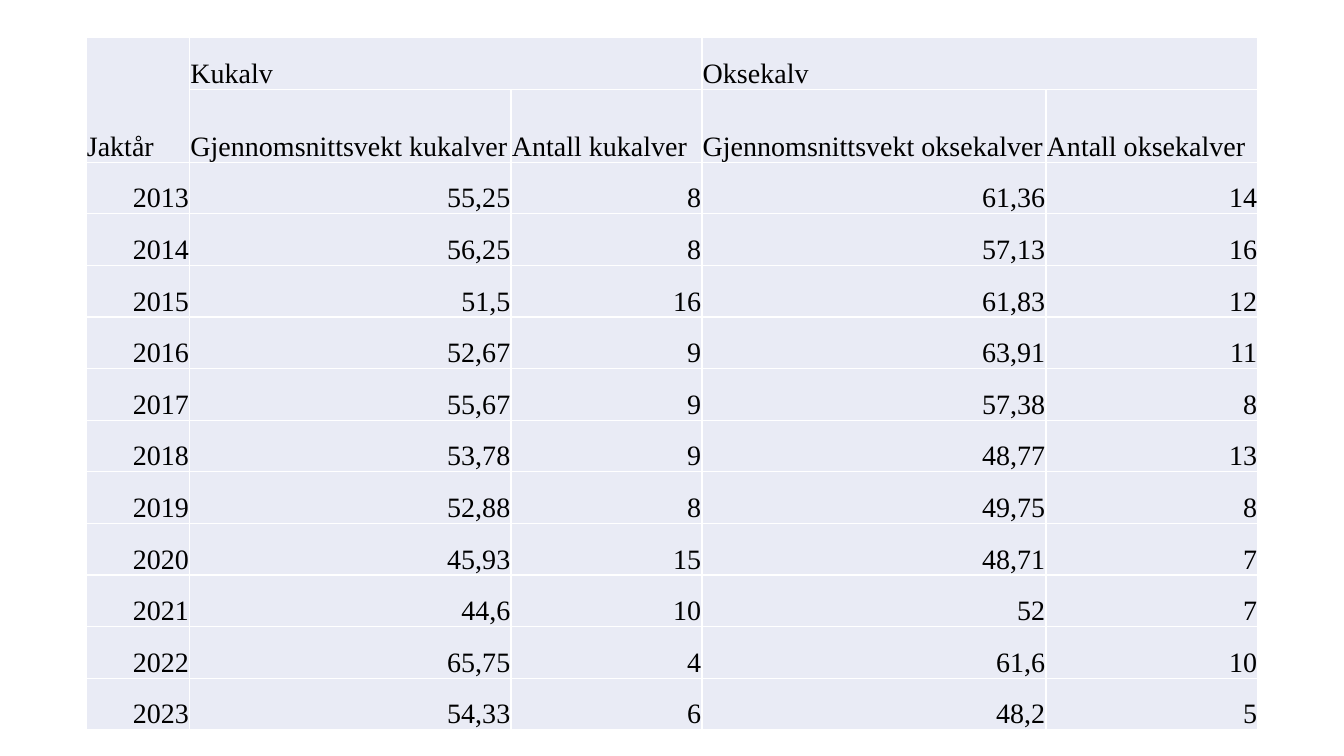
from dataclasses import dataclass

from lxml import etree
from pptx import Presentation
from pptx import util as u
from pptx.dml import color
from pptx.enum import text
from pptx.oxml import ns

COLORS = {"cell": "E9EBF5", "border": "FFFFFF", "text": "000000"}
COLUMN_WIDTHS = (2.61, 8.1, 4.81, 8.67, 5.34)
ROW_HEIGHT = 1.3
SUBHEADER_HEIGHT = 1.84


@dataclass(frozen=True)
class Header:
    row: int
    column: int
    label: str
    rows: int = 1
    columns: int = 1


@dataclass(frozen=True)
class HuntingYear:
    year: str
    cow_weight: str
    cow_count: str
    bull_weight: str
    bull_count: str

    def values(self) -> tuple[str, ...]:
        return (self.year, self.cow_weight, self.cow_count,
                self.bull_weight, self.bull_count)


HEADERS = (
    Header(0, 0, "Jaktår", rows=2),
    Header(0, 1, "Kukalv", columns=2),
    Header(0, 3, "Oksekalv", columns=2),
    Header(1, 1, "Gjennomsnittsvekt kukalver"),
    Header(1, 2, "Antall kukalver"),
    Header(1, 3, "Gjennomsnittsvekt oksekalver"),
    Header(1, 4, "Antall oksekalver"),
)

HUNTING_YEARS = (
    HuntingYear("2013", "55,25", "8", "61,36", "14"),
    HuntingYear("2014", "56,25", "8", "57,13", "16"),
    HuntingYear("2015", "51,5", "16", "61,83", "12"),
    HuntingYear("2016", "52,67", "9", "63,91", "11"),
    HuntingYear("2017", "55,67", "9", "57,38", "8"),
    HuntingYear("2018", "53,78", "9", "48,77", "13"),
    HuntingYear("2019", "52,88", "8", "49,75", "8"),
    HuntingYear("2020", "45,93", "15", "48,71", "7"),
    HuntingYear("2021", "44,6", "10", "52", "7"),
    HuntingYear("2022", "65,75", "4", "61,6", "10"),
    HuntingYear("2023", "54,33", "6", "48,2", "5"),
)


def write_text(cell, content: str, *, align=text.PP_ALIGN.LEFT, size: float = 20,
               font: str = "Times New Roman", fill: str = "text") -> None:
    paragraph = cell.text_frame.paragraphs[0]
    paragraph.alignment = align
    run = paragraph.add_run()
    run.text = content
    run.font.size = u.Pt(size)
    run.font.name = font
    run.font.color.rgb = color.RGBColor.from_string(COLORS[fill])


def style_cell(cell) -> None:
    properties = cell._tc.get_or_add_tcPr()
    for side in ("lnL", "lnR", "lnT", "lnB"):
        line = etree.SubElement(properties, ns.qn(f"a:{side}"), w=str(u.Pt(1)))
        solid = etree.SubElement(line, ns.qn("a:solidFill"))
        etree.SubElement(solid, ns.qn("a:srgbClr"), val=COLORS["border"])
    cell.fill.solid()
    cell.fill.fore_color.rgb = color.RGBColor.from_string(COLORS["cell"])
    cell.vertical_anchor = text.MSO_ANCHOR.BOTTOM
    cell.margin_left = cell.margin_right = cell.margin_top = u.Cm(0.02)
    cell.margin_bottom = 0


def add_weight_table(slide) -> None:
    row_heights = [ROW_HEIGHT, SUBHEADER_HEIGHT] + [ROW_HEIGHT] * len(HUNTING_YEARS)
    table = slide.shapes.add_table(
        len(row_heights), len(COLUMN_WIDTHS), u.Cm(2.17), u.Cm(0.95),
        u.Cm(sum(COLUMN_WIDTHS)), u.Cm(sum(row_heights))).table
    table.first_row = table.horz_banding = False
    for column, width in zip(table.columns, COLUMN_WIDTHS):
        column.width = u.Cm(width)
    for row, height in zip(table.rows, row_heights):
        row.height = u.Cm(height)
    for cell in table.iter_cells():
        style_cell(cell)
    for header in HEADERS:
        cell = table.cell(header.row, header.column)
        if header.rows > 1 or header.columns > 1:
            cell.merge(table.cell(header.row + header.rows - 1,
                                  header.column + header.columns - 1))
        write_text(cell, header.label)
    for row_index, hunting_year in enumerate(HUNTING_YEARS, start=2):
        for column_index, value in enumerate(hunting_year.values()):
            write_text(table.cell(row_index, column_index), value,
                       align=text.PP_ALIGN.RIGHT)


def main() -> None:
    presentation = Presentation()
    presentation.slide_width = u.Cm(33.87)
    presentation.slide_height = u.Cm(19.05)
    slide = presentation.slides.add_slide(presentation.slide_layouts[6])
    add_weight_table(slide)
    presentation.save("out.pptx")


if __name__ == "__main__":
    main()
